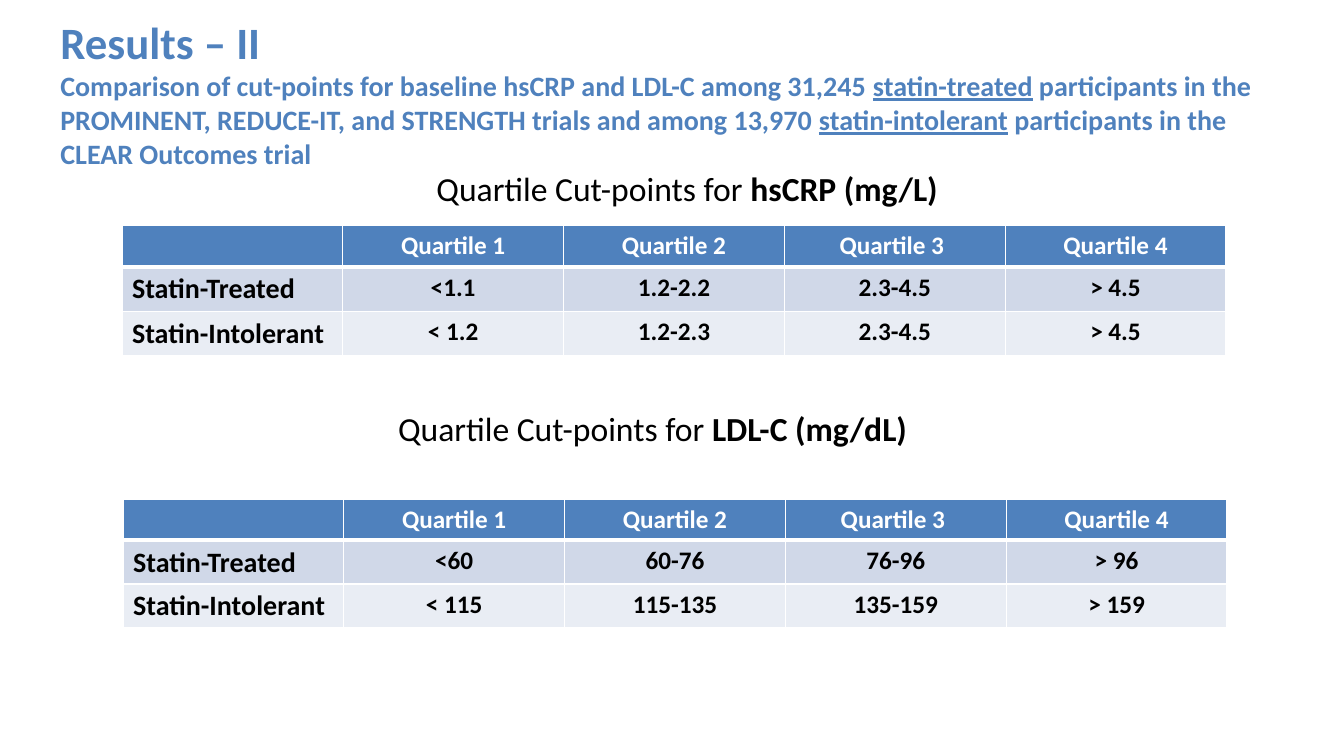
from lxml.etree import SubElement
from pptx import Presentation
from pptx.dml.color import RGBColor
from pptx.enum.text import MSO_ANCHOR, MSO_AUTO_SIZE, PP_ALIGN
from pptx.oxml.ns import qn
from pptx.util import Inches, Pt

FONT = "Calibri"
BLUE, WHITE, BLACK = "4F81BD", "FFFFFF", "000000"
ROW_FILLS = [BLUE, "D0D8E8", "E9EDF4"]
ROW_HEIGHTS = [0.41, 0.43, 0.43]
COLUMN_WIDTH = 2.19
QUARTILES = ["", "Quartile 1", "Quartile 2", "Quartile 3 ", "Quartile 4"]

HSCRP_ROWS = [
    QUARTILES,
    ["Statin-Treated", "<1.1", "1.2-2.2", "2.3-4.5", "> 4.5"],
    ["Statin-Intolerant", "< 1.2", "1.2-2.3", "2.3-4.5", "> 4.5"],
]
LDL_ROWS = [
    QUARTILES,
    ["Statin-Treated", "<60", "60-76", "76-96", "> 96"],
    ["Statin-Intolerant", "< 115", "115-135", "135-159", "> 159"],
]


def rgb(hex_color):
    return RGBColor.from_string(hex_color)


def style(run, size, color, bold=False, underline=False):
    font = run.font
    font.name, font.size, font.bold = FONT, Pt(size), bold
    font.underline = underline
    font.color.rgb = rgb(color)


def add_text(slide, box, wrap):
    frame = slide.shapes.add_textbox(*map(Inches, box)).text_frame
    frame.word_wrap = wrap
    frame.auto_size = MSO_AUTO_SIZE.SHAPE_TO_FIT_TEXT
    return frame


def add_heading(slide, box):
    frame = add_text(slide, box, wrap=True)
    title = frame.paragraphs[0]
    title.text = "Results – II"
    style(title.runs[0], 32, BLUE, bold=True)
    subtitle = frame.add_paragraph()
    for words, underline in [
        ("Comparison of cut-points for baseline hsCRP and LDL-C among 31,245 ", False),
        ("statin-treated", True),
        (" participants in the PROMINENT, REDUCE-IT, and STRENGTH trials "
         "and among 13,970 ", False),
        ("statin-intolerant", True),
        (" participants in the CLEAR Outcomes trial", False),
    ]:
        run = subtitle.add_run()
        run.text = words
        style(run, 20, BLUE, bold=True, underline=underline)


def add_caption(slide, box, marker):
    paragraph = add_text(slide, box, wrap=False).paragraphs[0]
    for words, bold in [("Quartile Cut-points for ", False), (marker, True)]:
        run = paragraph.add_run()
        run.text = words
        style(run, 24, BLACK, bold=bold)


def set_borders(cell, top, bottom):
    """Draw white cell borders; top and bottom are widths in points."""
    properties = cell._tc.get_or_add_tcPr()
    for side, width in [("L", 1), ("R", 1), ("T", top), ("B", bottom)]:
        line = SubElement(properties, qn(f"a:ln{side}"), w=str(Pt(width)))
        fill = SubElement(line, qn("a:solidFill"))
        SubElement(fill, qn("a:srgbClr"), val=WHITE)


def add_quartile_table(slide, left, top, rows):
    columns = len(QUARTILES)
    table = slide.shapes.add_table(
        len(rows), columns, Inches(left), Inches(top),
        Inches(COLUMN_WIDTH * columns), Inches(sum(ROW_HEIGHTS))).table
    for column in table.columns:
        column.width = Inches(COLUMN_WIDTH)
    for r, values in enumerate(rows):
        table.rows[r].height = Inches(ROW_HEIGHTS[r])
        for c, value in enumerate(values):
            cell = table.cell(r, c)
            set_borders(cell, top=3 if r == 1 else 1, bottom=3 if r == 0 else 1)
            cell.fill.solid()
            cell.fill.fore_color.rgb = rgb(ROW_FILLS[r])
            cell.vertical_anchor = MSO_ANCHOR.TOP
            if not value:
                continue
            paragraph = cell.text_frame.paragraphs[0]
            paragraph.text = value
            paragraph.alignment = PP_ALIGN.CENTER if c else PP_ALIGN.LEFT
            style(paragraph.runs[0], 18 if c else 20,
                  BLACK if r else WHITE, bold=True)


def main():
    presentation = Presentation()
    presentation.slide_width = Inches(13.33)
    presentation.slide_height = Inches(7.5)
    slide = presentation.slides.add_slide(presentation.slide_layouts[6])
    add_quartile_table(slide, 1.21, 2.24, HSCRP_ROWS)
    add_caption(slide, (4.23, 1.62, 5.31, 0.5), "hsCRP (mg/L)")
    add_caption(slide, (3.85, 4, 5.33, 0.5), "LDL-C (mg/dL)")
    add_heading(slide, (0.5, 0.1, 12.19, 1.65))
    add_quartile_table(slide, 1.22, 4.95, LDL_ROWS)
    presentation.save("out.pptx")


if __name__ == "__main__":
    main()
